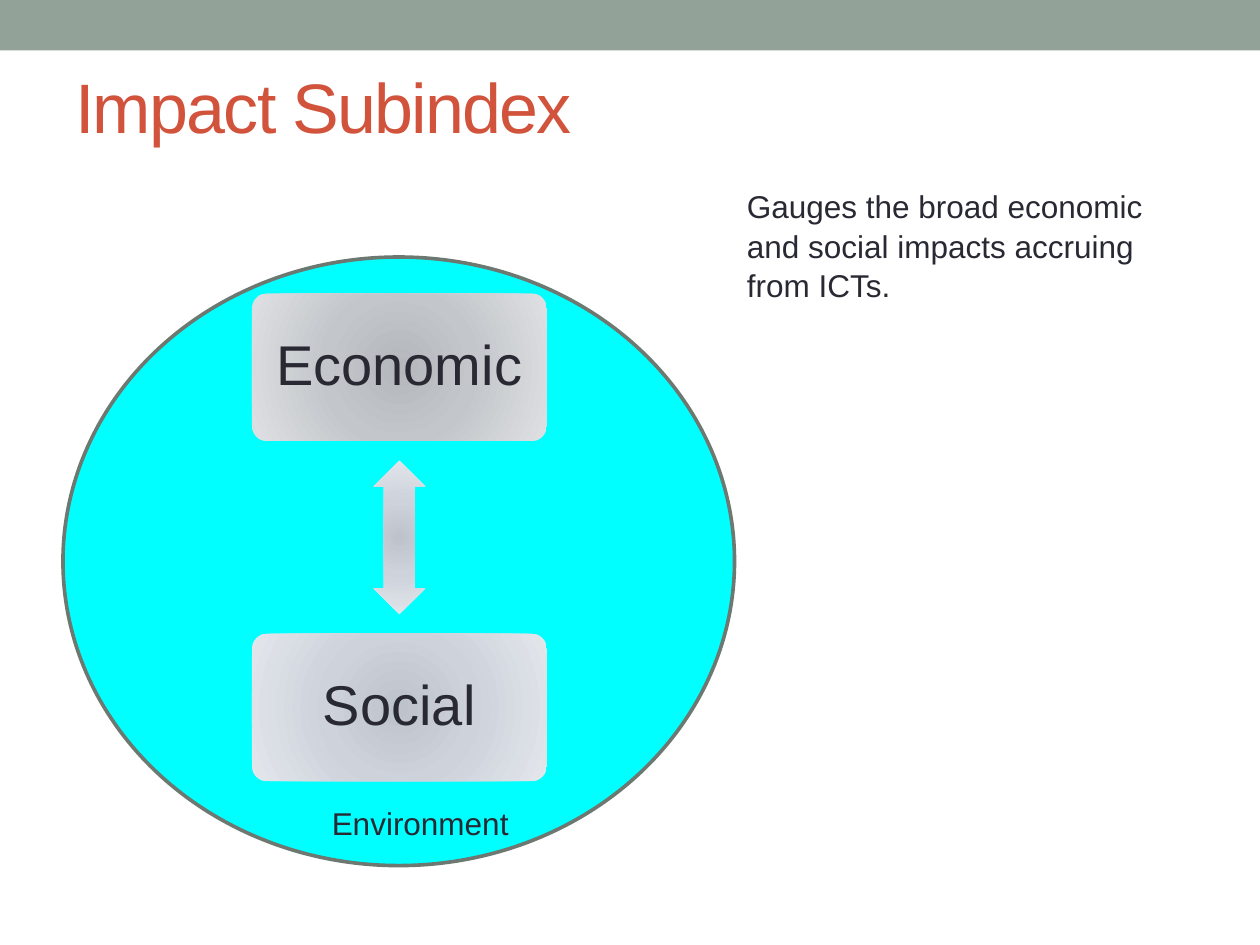
from lxml import etree
from pptx import Presentation
from pptx.dml.color import RGBColor
from pptx.enum import shapes, text
from pptx.oxml.ns import qn
from pptx.util import Inches, Pt

# Content
TITLE = "Impact Subindex"
BODY = "Gauges the broad economic and social impacts accruing from ICTs."
ENVIRONMENT = "Environment"
BOXES = [("Economic", "warm"), ("Social", "cool")]

THEME = {
    "font": "Arial", "ink": "292934", "title": "D2533C", "band": "93A299",
    "circle": "00FFFF", "outline": "6D7871",
    "title_pt": 40, "box_pt": 32, "text_pt": 18,
    "warm": [(0, "B4B7BC"), (45, "C3C7CB"), (100, "DFE0E3")],
    "cool": [(0, "BEC3CB"), (45, "CDD2DB"), (100, "E3E6EB")],
}
# Column of boxes inside the circle
CENTER_X, BOX_W, BOX_H, BOX_TOP, BOX_PITCH = 3.17, 2.34, 1.17, 2.33, 2.7
ARROW_W, ARROW_H = 1.22, 0.41

prs = Presentation()
prs.slide_width, prs.slide_height = Inches(10), Inches(7.5)
s = prs.slides.add_slide(prs.slide_layouts[6])


def add_shape(kind, x, y, w, h, color=None):
    sp = s.shapes.add_shape(kind, Inches(x), Inches(y), Inches(w), Inches(h))
    sp.shadow.inherit = False
    sp.line.fill.background()
    if color:
        sp.fill.solid()
        sp.fill.fore_color.rgb = RGBColor.from_string(color)
    return sp


def radial_fill(sp, stops):
    sp.fill.gradient()
    grad = sp.fill._xPr.find(qn("a:gradFill"))
    for child in list(grad):
        grad.remove(child)
    gs_list = etree.SubElement(grad, qn("a:gsLst"))
    for pos, color in stops:
        gs = etree.SubElement(gs_list, qn("a:gs"), pos=str(pos * 1000))
        etree.SubElement(gs, qn("a:srgbClr"), val=color)
    circle = etree.SubElement(grad, qn("a:path"), {"path": "circle"})
    etree.SubElement(circle, qn("a:fillToRect"), {side: "100000" for side in "ltrb"})


def write(sp, words, size, color=THEME["ink"], align=text.PP_ALIGN.LEFT,
          anchor=text.MSO_ANCHOR.TOP, spacing=1.0):
    tf = sp.text_frame
    tf.word_wrap = True
    tf.vertical_anchor = anchor
    p = tf.paragraphs[0]
    p.alignment, p.line_spacing = align, spacing
    r = p.add_run()
    r.text = words
    r.font.name, r.font.size = THEME["font"], Pt(size)
    r.font.color.rgb = RGBColor.from_string(color)
    return r


def add_text(x, y, w, h, *args, **kwargs):
    sp = s.shapes.add_textbox(Inches(x), Inches(y), Inches(w), Inches(h))
    return write(sp, *args, **kwargs)


# Top band and title
add_shape(shapes.MSO_SHAPE.RECTANGLE, 0, 0, 10, 0.4, THEME["band"])
r = add_text(0.5, 0.25, 9, 1.17, TITLE, THEME["title_pt"], THEME["title"],
             anchor=text.MSO_ANCHOR.MIDDLE)
r.font._element.set("spc", "-100")

# Environment circle
sp = add_shape(shapes.MSO_SHAPE.OVAL, 0.5, 2.04, 5.33, 4.83, THEME["circle"])
sp.line.color.rgb = RGBColor.from_string(THEME["outline"])
sp.line.width = Pt(2.08)

# Boxes
for i, (label, tone) in enumerate(BOXES):
    sp = add_shape(shapes.MSO_SHAPE.ROUNDED_RECTANGLE, CENTER_X - BOX_W / 2,
                   BOX_TOP + i * BOX_PITCH, BOX_W, BOX_H)
    sp.adjustments[0] = 0.1
    radial_fill(sp, THEME[tone])
    write(sp, label, THEME["box_pt"], align=text.PP_ALIGN.CENTER,
          anchor=text.MSO_ANCHOR.MIDDLE, spacing=0.9)

# Two-way arrow, halfway between the boxes
middle = BOX_TOP + (BOX_PITCH + BOX_H) / 2
sp = add_shape(shapes.MSO_SHAPE.LEFT_RIGHT_ARROW, CENTER_X - ARROW_W / 2,
               middle - ARROW_H / 2, ARROW_W, ARROW_H)
sp.rotation = 270
sp.adjustments[0], sp.adjustments[1] = 0.6, 0.5
radial_fill(sp, THEME["cool"])

# Circle label and description
add_text(2.17, 6.32, 2.33, 0.4, ENVIRONMENT, THEME["text_pt"],
         align=text.PP_ALIGN.CENTER, spacing=1.05)
add_text(5.83, 1.42, 3.5, 1.31, BODY, THEME["text_pt"], spacing=1.05)

prs.save("out.pptx")
